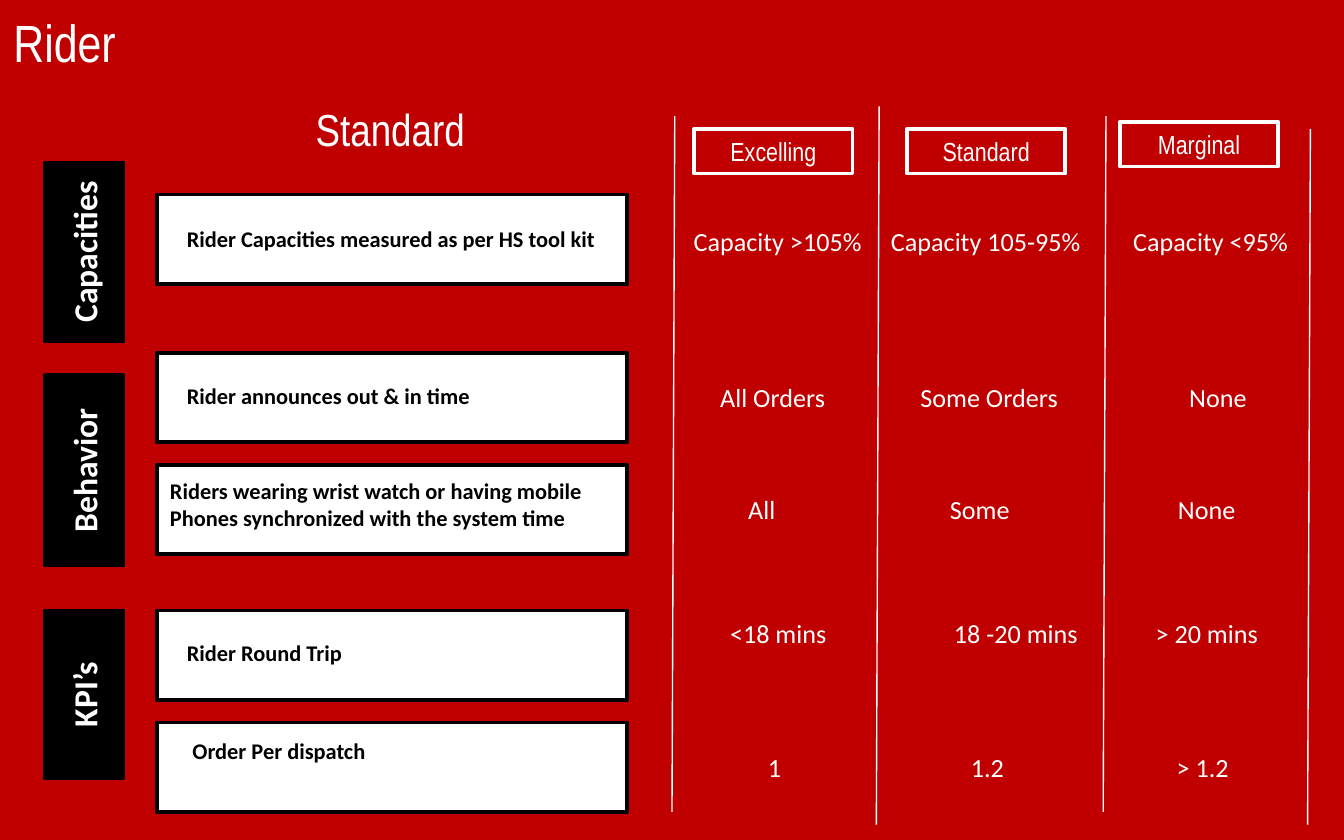
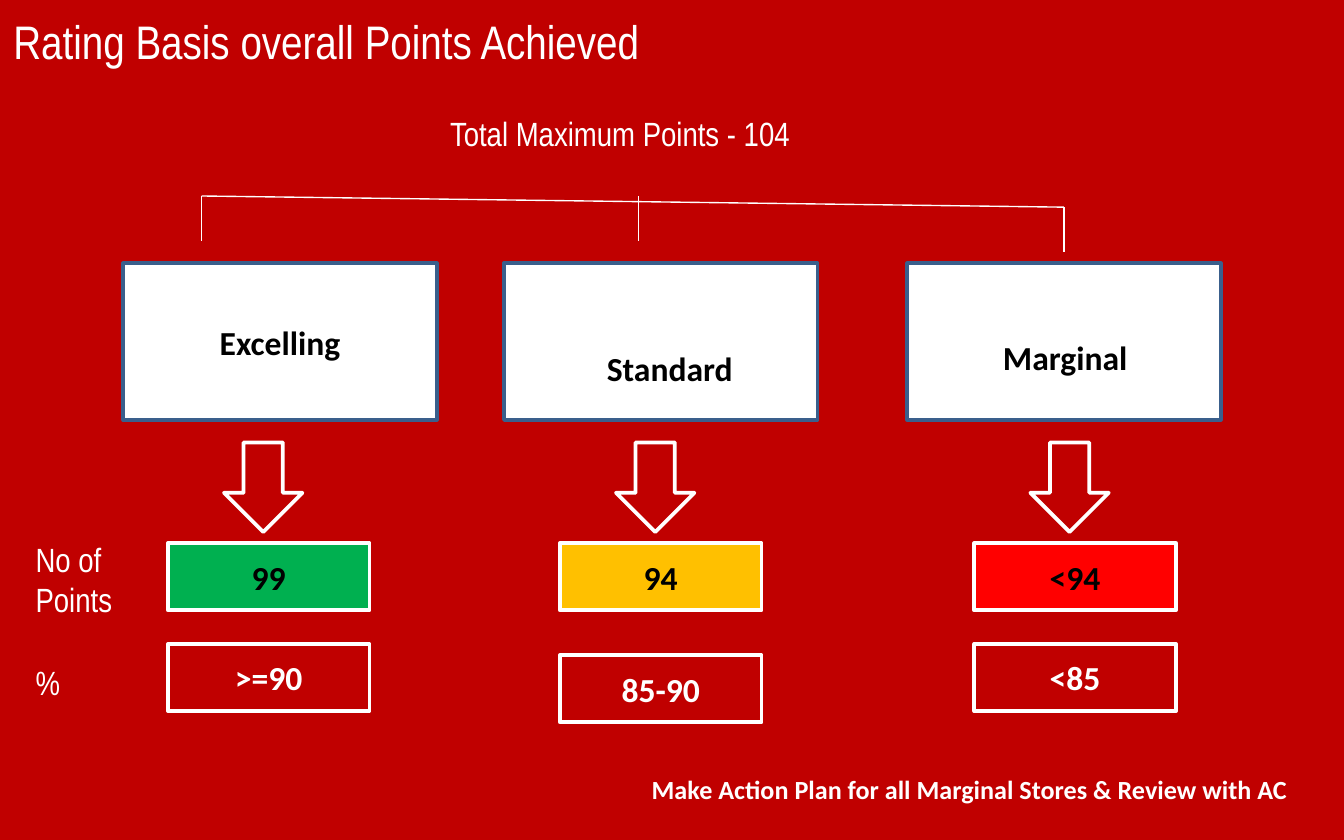
"""Build the rider standards slide and the rating basis slide."""
from dataclasses import dataclass

from lxml.etree import SubElement
from pptx import Presentation
from pptx.dml.color import RGBColor
from pptx.enum.shapes import MSO_CONNECTOR as Connector, MSO_SHAPE as Preset
from pptx.enum.text import MSO_ANCHOR as Anchor, MSO_AUTO_SIZE as AutoSize, PP_ALIGN as Align
from pptx.oxml.ns import qn
from pptx.util import Emu, Pt

PX = 9525
NARROW, SANS = "Arial Narrow", "Calibri"
COLORS = {
    "red": "C00000",
    "white": "FFFFFF",
    "black": "000000",
    "blue": "3A5F8C",
    "green": "00B050",
    "amber": "FFC000",
    "alert": "FF0000",
}


@dataclass(frozen=True)
class Style:
    font: str
    size: float
    color: str = "white"
    bold: bool = False


TITLE = Style(NARROW, 28)
LONG_TITLE = Style(NARROW, 25.2)
HEADING = Style(NARROW, 24)
NOTE = Style(NARROW, 18)
GRADE = Style(NARROW, 14)
CELL = Style(SANS, 14)
ACTION = Style(SANS, 14, bold=True)
CRITERION = Style(SANS, 12, "black", True)
BAND = Style(SANS, 18, bold=True)
RATING = Style(SANS, 18, "black", True)


@dataclass(frozen=True)
class Label:
    text: str
    left: int
    top: int
    width: int
    height: int
    style: Style


@dataclass(frozen=True)
class Panel:
    left: int
    top: int
    width: int
    height: int
    fill: str
    line: str
    text: str = ""
    style: Style = BAND
    preset: Preset = Preset.RECTANGLE
    rotation: int = 0


@dataclass(frozen=True)
class Line:
    x1: int
    y1: int
    x2: int
    y2: int


@dataclass(frozen=True)
class Cell:
    text: str
    left: int
    width: int


@dataclass(frozen=True)
class Criterion:
    panel_top: int
    label: Label
    cell_top: int
    cells: tuple[Cell, ...]


@dataclass(frozen=True)
class Rating:
    name: str
    panel_left: int
    score_left: int
    color: str
    points: str
    percent: str
    percent_top: int


BANDS = (("Capacities", 180, 128), ("Behavior", 336, 136), ("KPI’s", 496, 120))
GRADES = (("Excelling", 92), ("Standard", 92), ("Marginal", 87))
DIVIDERS = ((482, 83, 580), (628, 76, 589), (790, 83, 580), (936, 92, 589))
CRITERIA = (
    Criterion(139, Label("Rider Capacities measured as per HS tool kit", 124, 156, 319, 29, CRITERION), 156,
              (Cell("Capacity >105%", 486, 141), Cell("Capacity 105-95%", 627, 157),
               Cell("Capacity <95%", 800, 132))),
    Criterion(252, Label("Rider announces out & in time", 124, 268, 225, 29, CRITERION), 268,
              (Cell("All Orders", 505, 98), Cell("Some Orders", 648, 123), Cell("None", 840, 65))),
    Criterion(332, Label("Riders wearing wrist watch or having mobile\nPhones synchronized with the system time",
                         112, 336, 322, 68, CRITERION), 348,
              (Cell("All", 525, 43), Cell("Some", 669, 66), Cell("None", 832, 65))),
    Criterion(436, Label("Rider Round Trip", 124, 452, 132, 29, CRITERION), 436,
              (Cell("<18 mins", 512, 89), Cell("18 -20 mins", 672, 108), Cell("> 20 mins", 816, 93))),
    Criterion(516, Label("Order Per dispatch", 128, 522, 148, 29, CRITERION), 532,
              (Cell("1", 539, 29), Cell("1.2", 684, 43), Cell("> 1.2", 831, 57))),
)
RATINGS = (
    Rating("Excelling", 88, 120, "green", "99", ">=90", 460),
    Rating("", 360, 400, "amber", "94", "85-90", 468),
    Rating("", 648, 696, "alert", "<94", "<85", 460),
)
BRACKET = (
    Line(760, 148, 144, 140),
    Line(144, 140, 144, 172),
    Line(456, 140, 456, 172),
    Line(760, 148, 760, 180),
)
RATING_LABELS = (
    Label("Total Maximum Points - 104", 312, 76, 295, 68, NOTE),
    Label("Standard", 424, 244, 111, 38, RATING),
    Label("Marginal", 707, 236, 110, 38, RATING),
    Label("No of\nPoints", 16, 380, 82, 97, NOTE),
    Label("%", 16, 468, 37, 68, NOTE),
    Label("Make Action Plan for all Marginal Stores & Review with AC", 456, 548, 486, 33, ACTION),
)


def px(*values: int) -> list[Emu]:
    return [Emu(value * PX) for value in values]


def rgb(name: str) -> RGBColor:
    return RGBColor.from_string(COLORS[name])


def write(frame, text: str, style: Style, align: Align, anchor: Anchor) -> None:
    frame.text = text
    frame.word_wrap = True
    frame.auto_size = AutoSize.NONE
    frame.vertical_anchor = anchor
    for para in frame.paragraphs:
        para.alignment = align
        para.font.name = style.font
        para.font.size = Pt(style.size)
        para.font.bold = style.bold
        para.font.color.rgb = rgb(style.color)


def add_label(slide, label: Label) -> None:
    box = slide.shapes.add_textbox(*px(label.left, label.top, label.width, label.height))
    write(box.text_frame, label.text, label.style, Align.LEFT, Anchor.TOP)
    box.text_frame.margin_right = 0


def add_panel(slide, panel: Panel) -> None:
    box = slide.shapes.add_shape(panel.preset, *px(panel.left, panel.top, panel.width, panel.height))
    box.rotation = panel.rotation
    box.shadow.inherit = False
    box.fill.solid()
    box.fill.fore_color.rgb = rgb(panel.fill)
    box.line.color.rgb = rgb(panel.line)
    box.line.width = Pt(2)
    if panel.text:
        write(box.text_frame, panel.text, panel.style, Align.CENTER, Anchor.MIDDLE)


def add_line(slide, line: Line) -> None:
    connector = slide.shapes.add_connector(Connector.STRAIGHT, *px(line.x1, line.y1, line.x2, line.y2))
    connector.line.color.rgb = rgb("white")
    connector.line.width = Pt(0.75)
    SubElement(connector._element.spPr, qn("a:effectLst"))


def add_page(deck, text: str, style: Style, top: int, height: int, anchor: Anchor):
    page = deck.slides.add_slide(deck.slide_layouts[5])
    page.background.fill.solid()
    page.background.fill.fore_color.rgb = rgb("red")
    title = page.shapes.title
    title.left, title.top, title.width, title.height = px(0, top, 864, height)
    write(title.text_frame, text, style, Align.LEFT, anchor)
    return page


def build_rider(deck) -> None:
    page = add_page(deck, "Rider", TITLE, 0, 60, Anchor.MIDDLE)
    add_label(page, Label("Standard", 216, 68, 141, 46, HEADING))
    for index, (name, top) in enumerate(GRADES):
        add_panel(page, Panel(496 + 152 * index, top, 113, 32, "red", "white", name, GRADE))
    for x, top, bottom in DIVIDERS:
        add_line(page, Line(x, top, x - 2, bottom))
    for name, middle, length in BANDS:
        add_panel(page, Panel(60 - length // 2, middle - 28, length, 56, "black", "black", name, rotation=270))
    for criterion in CRITERIA:
        add_panel(page, Panel(112, criterion.panel_top, 336, 64, "white", "black"))
        add_label(page, criterion.label)
        for cell in criterion.cells:
            add_label(page, Label(cell.text, cell.left, criterion.cell_top, cell.width, 33, CELL))


def build_rating(deck) -> None:
    page = add_page(deck, "Rating Basis overall Points Achieved", LONG_TITLE, 4, 84, Anchor.TOP)
    for line in BRACKET:
        add_line(page, line)
    for rating in RATINGS:
        left = rating.score_left
        add_panel(page, Panel(rating.panel_left, 188, 224, 112, "white", "blue", rating.name, RATING))
        add_panel(page, Panel(left + 36, 320, 64, 56, "red", "white", preset=Preset.RIGHT_ARROW, rotation=90))
        add_panel(page, Panel(left, 388, 144, 48, rating.color, "white", rating.points, RATING))
        add_panel(page, Panel(left, rating.percent_top, 144, 48, "red", "white", rating.percent))
    for label in RATING_LABELS:
        add_label(page, label)


def main() -> None:
    deck = Presentation()
    deck.slide_width, deck.slide_height = px(960, 600)
    build_rider(deck)
    build_rating(deck)
    deck.save("out.pptx")


if __name__ == "__main__":
    main()
